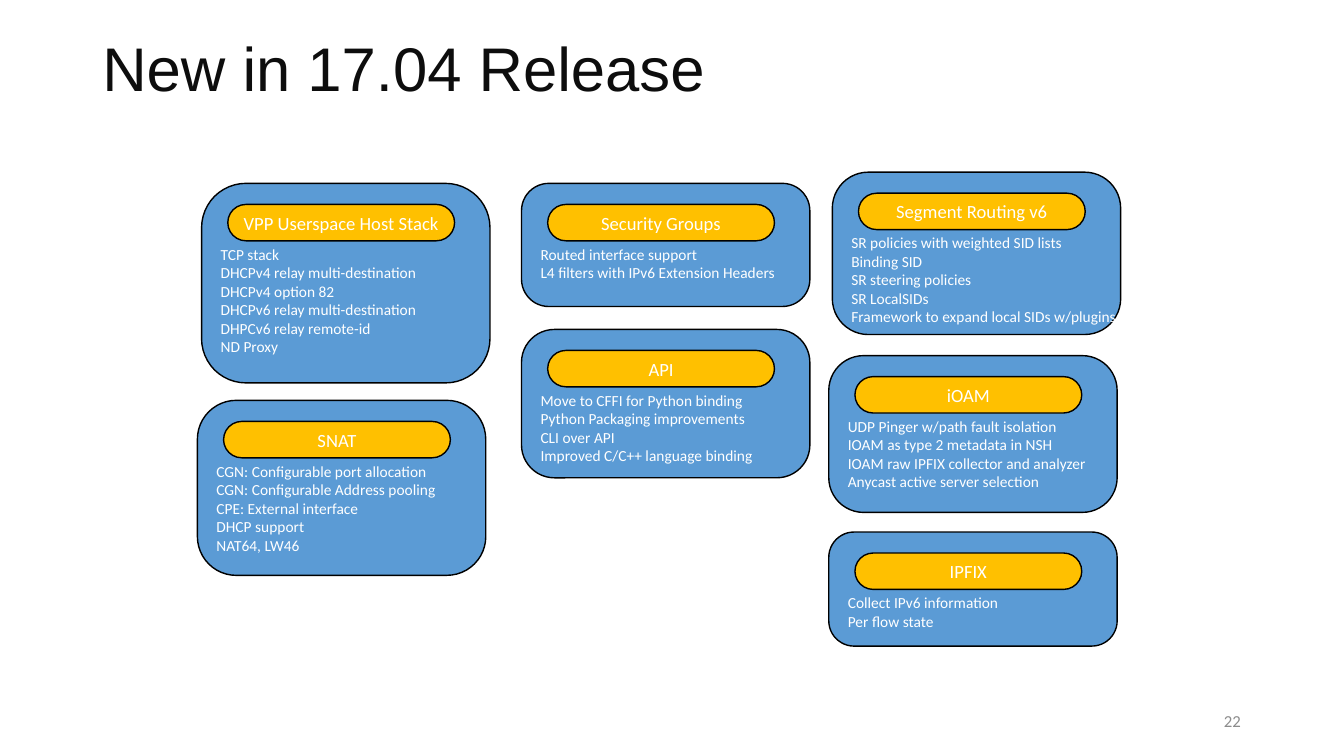
from pptx import Presentation
from pptx.dml.color import RGBColor
from pptx.enum.shapes import MSO_SHAPE
from pptx.enum.text import MSO_ANCHOR, PP_ALIGN
from pptx.util import Pt

ROUNDED = MSO_SHAPE.ROUNDED_RECTANGLE
TOP, MIDDLE = MSO_ANCHOR.TOP, MSO_ANCHOR.MIDDLE
LEFT, CENTER, RIGHT = PP_ALIGN.LEFT, PP_ALIGN.CENTER, PP_ALIGN.RIGHT

COLORS = {
    "card": "5B9BD5",
    "pill": "FFC000",
    "outline": "000000",
    "light": "FFFFFF",
    "title": "0D0D0D",
    "number": "8C8C8C",
}

FORMATS = {
    "title": {"name": "Arial", "size": Pt(44)},
    "number": {"name": "Calibri", "size": Pt(12)},
    "heading": {"name": "Calibri", "size": Pt(13.3)},
    "feature": {"name": "Calibri", "size": Pt(11)},
}

CARD_WIDTH = 206
PILL_WIDTH, PILL_HEIGHT = 162, 26
LINE_HEIGHT = 13.3

# left, top, card height, list width, heading, features
CARDS = [
    (144, 131, 142.5, 192, "VPP Userspace Host Stack", [
        "TCP stack",
        "DHCPv4 relay multi-destination",
        "DHCPv4 option 82",
        "DHCPv6 relay multi-destination",
        "DHPCv6 relay remote-id",
        "ND Proxy",
    ]),
    (141, 286, 125, 209, "SNAT", [
        "CGN: Configurable port allocation",
        "CGN: Configurable Address pooling",
        "CPE: External interface",
        "DHCP support",
        "NAT64, LW46",
    ]),
    (372.5, 131, 88, 220, "Security Groups", [
        "Routed interface support",
        "L4 filters with IPv6 Extension Headers",
    ]),
    (372.5, 235.3, 106, 203, "API", [
        "Move to CFFI for Python binding",
        "Python Packaging improvements",
        "CLI over API",
        "Improved C/C++ language binding",
    ]),
    (594.5, 123, 116, 244, "Segment Routing v6", [
        "SR policies with weighted SID lists",
        "Binding SID",
        "SR steering policies",
        "SR LocalSIDs",
        "Framework to expand local SIDs w/plugins",
    ]),
    (592, 254, 112, 222.5, "iOAM", [
        "UDP Pinger w/path fault isolation",
        "IOAM as type 2 metadata in NSH",
        "IOAM raw IPFIX collector and analyzer",
        "Anycast active server selection",
    ]),
    (592, 380, 81.5, 159, "IPFIX", [
        "Collect IPv6 information",
        "Per flow state",
    ]),
]


def color(name):
    return RGBColor.from_string(COLORS[name])


def write_lines(box, lines, style, ink, align=LEFT, anchor=TOP, indent=0):
    frame = box.text_frame
    frame.word_wrap = True
    frame.vertical_anchor = anchor
    frame.text = "\n".join(lines)
    for para in frame.paragraphs:
        para.alignment = align
        if indent:
            para.level = 1
            properties = para._p.get_or_add_pPr()
            properties.set("marL", str(Pt(indent)))
            properties.set("indent", "0")
        for span in para.runs:
            for attribute, value in FORMATS[style].items():
                setattr(span.font, attribute, value)
            span.font.color.rgb = color(ink)


def add_text(shapes, left, top, width, height, *args, **options):
    box = shapes.add_textbox(Pt(left), Pt(top), Pt(width), Pt(height))
    write_lines(box, *args, **options)
    return box


def add_rounded(shapes, left, top, width, height, fill, rounding):
    shape = shapes.add_shape(ROUNDED, Pt(left), Pt(top), Pt(width), Pt(height))
    shape.adjustments[0] = rounding
    shape.shadow.inherit = False
    shape.fill.solid()
    shape.fill.fore_color.rgb = color(fill)
    shape.line.color.rgb = color("outline")
    shape.line.width = Pt(1)
    return shape


def add_card(page, left, top, height, list_width, heading, features):
    """Group a card with its heading pill and its indented feature list."""
    shapes = page.shapes.add_group_shape().shapes
    add_rounded(shapes, left, top, CARD_WIDTH, height, "card", 0.222)
    pill = add_rounded(shapes, left + 18.7, top + 15, PILL_WIDTH, PILL_HEIGHT,
                       "pill", 0.5)
    pill.text_frame.margin_left = pill.text_frame.margin_right = 0
    write_lines(pill, [heading], "heading", "light", CENTER, MIDDLE)
    add_text(shapes, left - 29.5, top + 40.3, list_width,
             74 + LINE_HEIGHT * len(features),
             features, "feature", "light", indent=36)


def main():
    deck = Presentation()
    deck.slide_width, deck.slide_height = Pt(960), Pt(540)
    page = deck.slides.add_slide(deck.slide_layouts[6])
    add_text(page.shapes, 846.7, 500.5, 46.8, 28.8, ["22"], "number", "number",
             RIGHT, MIDDLE)
    title = add_text(page.shapes, 66, -1.4, 828, 104.4,
                     ["New in 17.04 Release"], "title", "title", anchor=MIDDLE)
    title.text_frame.paragraphs[0].line_spacing = 0.9
    for card in CARDS:
        add_card(page, *card)
    deck.save("out.pptx")


if __name__ == "__main__":
    main()
